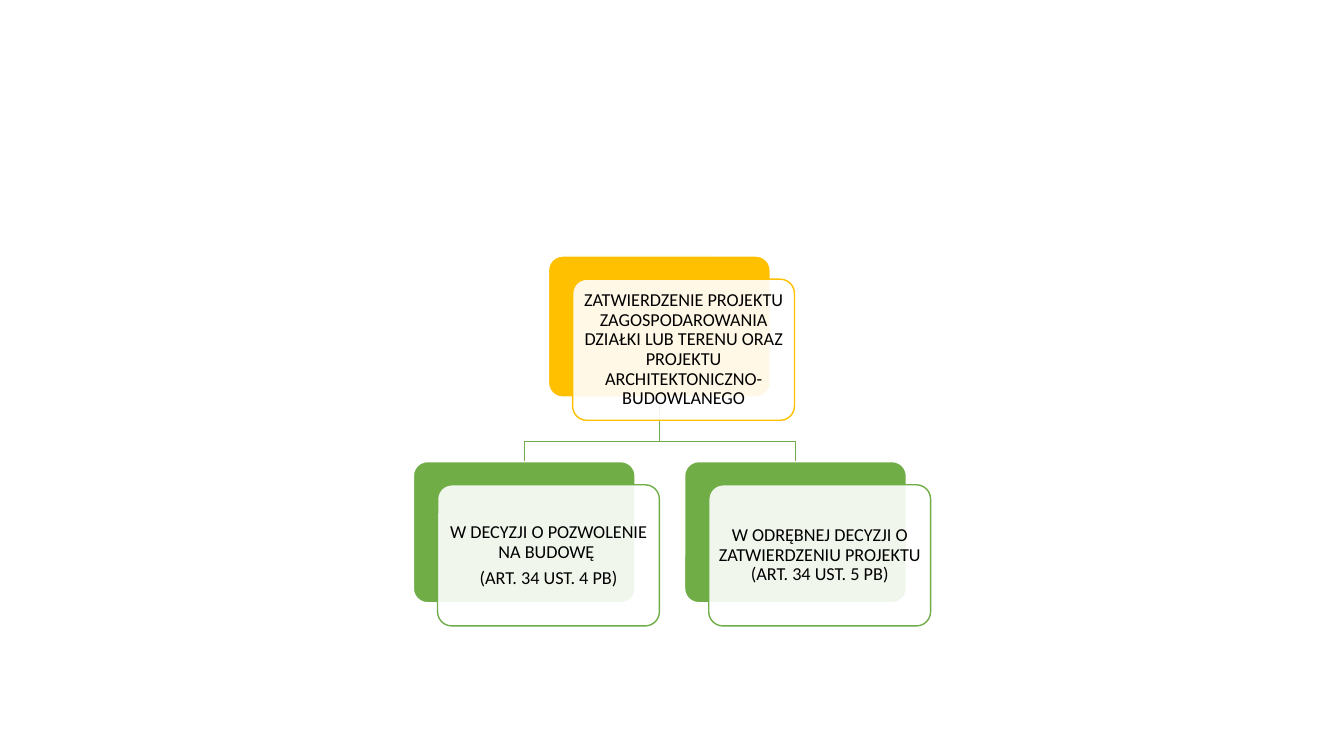
from lxml.etree import SubElement
from pptx import Presentation
from pptx.dml.color import RGBColor
from pptx.enum.shapes import MSO_SHAPE
from pptx.enum.text import MSO_ANCHOR, PP_ALIGN
from pptx.oxml.ns import qn
from pptx.util import Inches, Pt

BLACK = RGBColor(0, 0, 0)
WHITE = RGBColor(255, 255, 255)
GOLD = RGBColor(0xFF, 0xC0, 0x00)
GREEN = RGBColor(0x70, 0xAD, 0x47)


class HierarchySlide:
    font, size = "Calibri", Pt(13)
    width, height = 2.2, 1.4
    shift_x, shift_y = 0.24, 0.23

    def __init__(self, prs):
        self.s = prs.slides.add_slide(prs.slide_layouts[6])

    def connector(self, parent, child):
        x1, y1 = parent[0] + self.width / 2, parent[1] + self.height
        x2, y2 = child[0] + self.width / 2, child[1]
        bend = y2 - 0.2
        points = [(x1, bend), (x2, bend), (x2, y2)]
        fb = self.s.shapes.build_freeform(Inches(x1), Inches(y1))
        fb.add_line_segments([(Inches(x), Inches(y)) for x, y in points], close=False)
        sp = fb.convert_to_shape()
        sp.shadow.inherit = False
        sp.fill.background()
        sp.line.color.rgb = GREEN
        sp.line.width = Pt(1)

    def box(self, x, y, fill, line):
        sp = self.s.shapes.add_shape(
            MSO_SHAPE.ROUNDED_RECTANGLE,
            Inches(x), Inches(y), Inches(self.width), Inches(self.height))
        sp.adjustments[0] = 0.1
        sp.shadow.inherit = False
        sp.fill.solid()
        sp.fill.fore_color.rgb = fill
        sp.line.color.rgb = line
        sp.line.width = Pt(1)
        return sp

    def card(self, position, color, paragraphs):
        x, y = position
        self.box(x, y, color, WHITE)
        sp = self.box(x + self.shift_x, y + self.shift_y, WHITE, color)
        rgb = sp.fill._xPr.find(qn("a:solidFill")).find(qn("a:srgbClr"))
        SubElement(rgb, qn("a:alpha"), val="90000")
        tf = sp.text_frame
        tf.word_wrap = True
        tf.vertical_anchor = MSO_ANCHOR.MIDDLE
        tf.margin_left = tf.margin_right = Inches(0.05)
        tf.margin_top = tf.margin_bottom = Inches(0.05)
        tf.text = "\n".join(paragraphs)
        for p in tf.paragraphs:
            p.alignment = PP_ALIGN.CENTER
            p.line_spacing = 0.9
            p.space_after = Pt(4.55)
            p.font.name = self.font
            p.font.size = self.size
            p.font.color.rgb = BLACK


def main():
    prs = Presentation()
    prs.slide_width, prs.slide_height = Inches(13.33), Inches(7.5)
    slide = HierarchySlide(prs)

    approval = (5.44, 2.54)
    permit, separate = (4.1, 4.58), (6.79, 4.58)
    for child in (separate, permit):
        slide.connector(approval, child)

    slide.card(approval, GOLD, [
        "ZATWIERDZENIE PROJEKTU ZAGOSPODAROWANIA DZIAŁKI LUB TERENU "
        "ORAZ PROJEKTU ARCHITEKTONICZNO-BUDOWLANEGO"])
    slide.card(permit, GREEN, [
        "W DECYZJI O POZWOLENIE NA BUDOWĘ ", "(ART. 34 UST. 4 PB)"])
    slide.card(separate, GREEN, [
        "W ODRĘBNEJ DECYZJI O ZATWIERDZENIU PROJEKTU\v(ART. 34 UST. 5 PB)"])

    prs.save("out.pptx")


if __name__ == "__main__":
    main()
